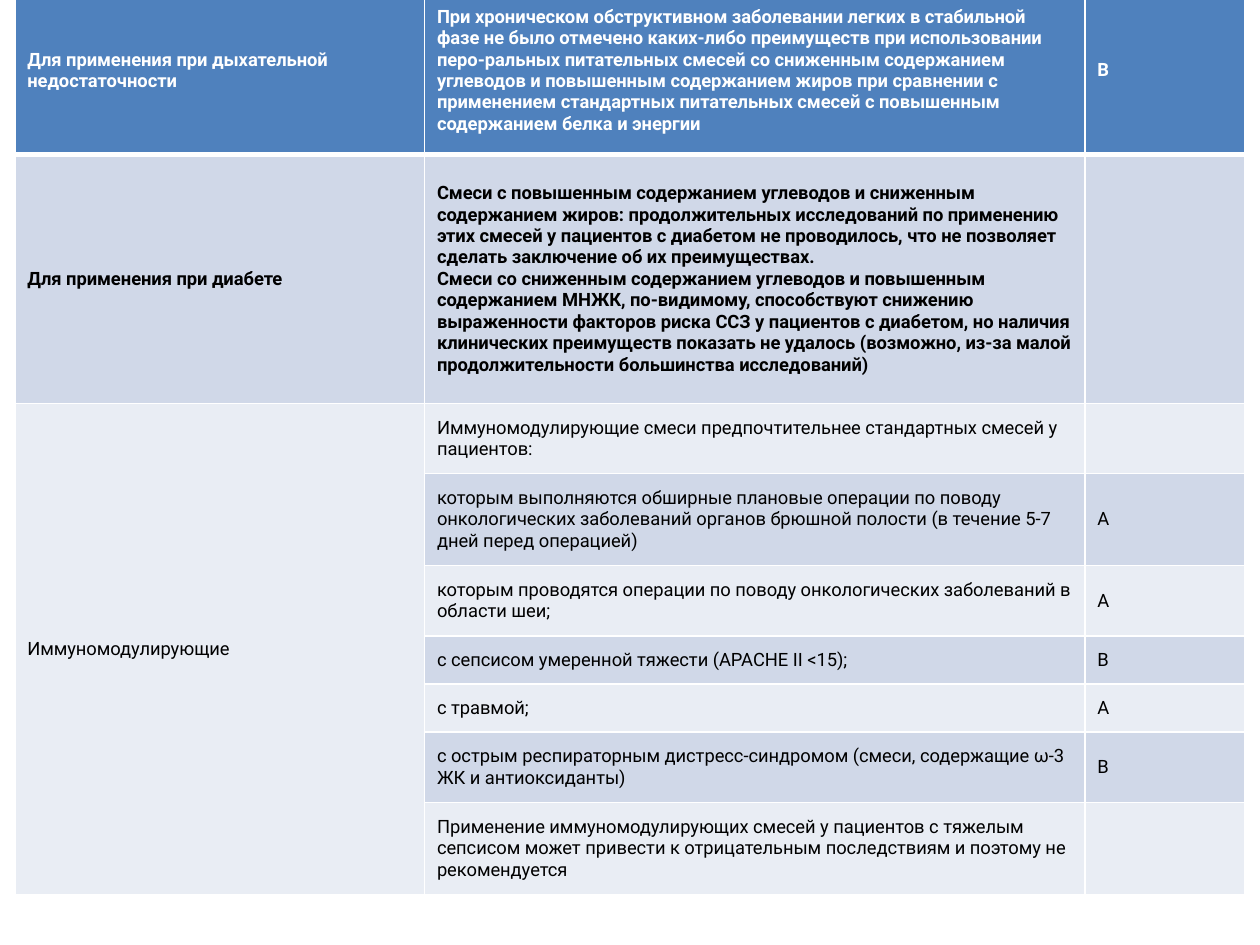
from lxml import etree
from pptx import Presentation
from pptx import util as u
from pptx.dml.color import RGBColor
from pptx.enum import text
from pptx.oxml import ns

WHITE = RGBColor(0xFF, 0xFF, 0xFF)
BLACK = RGBColor(0x00, 0x00, 0x00)
BLUE = RGBColor(0x4F, 0x81, 0xBD)
MID_BAND = RGBColor(0xD0, 0xD8, 0xE8)
LIGHT_BAND = RGBColor(0xE9, 0xED, 0xF4)

COLUMN_WIDTHS = [8.26, 13.31, 3.23]
ONE_LINE, TWO_LINES, THREE_LINES = 0.97, 1.42, 1.85
ROWS = [
    (3.4, ["Для применения при дыхательной недостаточности"],
     ["При хроническом обструктивном заболевании легких в стабильной фазе не было отмечено "
      "каких-либо преимуществ при использовании перо-ральных питательных смесей со сниженным "
      "содержанием углеводов и повышенным содержанием жиров при сравнении с применением "
      "стандартных питательных смесей с повышенным содержанием белка и энергии"], ["В"]),
    (5.01, ["Для применения при диабете"],
     ["Смеси с повышенным содержанием углеводов и сниженным содержанием жиров: продолжительных "
      "исследований по применению этих смесей у пациентов с диабетом не проводилось, что не "
      "позволяет сделать заключение об их преимуществах.",
      "Смеси со сниженным содержанием углеводов и повышенным содержанием МНЖК, по-видимому, "
      "способствуют снижению выраженности факторов риска ССЗ у пациентов с диабетом, но наличия "
      "клинических преимуществ показать не удалось (возможно, из-за малой продолжительности "
      "большинства исследований)"], []),
    (TWO_LINES, ["Иммуномодулирующие"],
     ["Иммуномодулирующие смеси предпочтительнее стандартных смесей у пациентов:"], []),
    (THREE_LINES, [],
     ["которым выполняются обширные плановые операции по поводу онкологических заболеваний "
      "органов брюшной полости (в течение 5-7 дней перед операцией)"], ["А"]),
    (TWO_LINES, [],
     ["которым проводятся операции по поводу онкологических заболеваний в области шеи;"], ["А"]),
    (ONE_LINE, [], ["с сепсисом умеренной тяжести (APACHE II <15);"], ["В"]),
    (ONE_LINE, [], ["с травмой;"], ["А"]),
    (TWO_LINES, [],
     ["с острым респираторным дистресс-синдромом (смеси, содержащие ω-3 ЖК и антиоксиданты)"],
     ["В"]),
    (THREE_LINES, [],
     ["Применение иммуномодулирующих смесей у пациентов с тяжелым сепсисом может привести к "
      "отрицательным последствиям и поэтому не рекомендуется"], []),
]
BOLD_ROWS = 2
MERGE_START = 2


class SlideBuilder:
    font = "Roboto"
    size = u.Pt(10.5)
    inset = u.Cm(0.25)

    def __init__(self, presentation):
        self.slide = presentation.slides.add_slide(presentation.slide_layouts[6])

    def table(self, left, top, widths, rows):
        heights = [row[0] for row in rows]
        frame = self.slide.shapes.add_table(
            len(rows), len(widths), u.Cm(left), u.Cm(top), u.Cm(sum(widths)), u.Cm(sum(heights)))
        table = frame.table
        for column, width in zip(table.columns, widths):
            column.width = u.Cm(width)
        for index, (height, *contents) in enumerate(rows):
            table.rows[index].height = u.Cm(height)
            band = MID_BAND if index % 2 else LIGHT_BAND
            for column, paragraphs in enumerate(contents):
                fill = BLUE if index == 0 else band
                if column == 0 and index >= MERGE_START:
                    fill = LIGHT_BAND
                self.cell(table.cell(index, column), paragraphs, fill,
                          WHITE if index == 0 else BLACK, index < BOLD_ROWS,
                          top=3 if index == 1 else 1, bottom=3 if index == 0 else 1)
        return table

    def cell(self, cell, paragraphs, fill, color, bold, top, bottom):
        cell.vertical_anchor = text.MSO_ANCHOR.MIDDLE
        cell.margin_left = cell.margin_right = self.inset
        cell.margin_top = cell.margin_bottom = self.inset
        for side, width in (("L", 1), ("R", 1), ("T", top), ("B", bottom)):
            self.border(cell, side, width)
        cell.fill.solid()
        cell.fill.fore_color.rgb = fill
        for index, content in enumerate(paragraphs):
            frame = cell.text_frame
            paragraph = frame.add_paragraph() if index else frame.paragraphs[0]
            self.run(paragraph, content, color, bold)

    def run(self, paragraph, content, color, bold):
        run = paragraph.add_run()
        run.text = content
        run.font.name = self.font
        run.font.size = self.size
        run.font.bold = bold
        run.font.color.rgb = color

    def border(self, cell, side, width):
        properties = cell._tc.get_or_add_tcPr()
        line = etree.SubElement(properties, ns.qn(f"a:ln{side}"), w=str(u.Pt(width)))
        fill = etree.SubElement(line, ns.qn("a:solidFill"))
        etree.SubElement(fill, ns.qn("a:srgbClr"), val=str(WHITE))


def main():
    presentation = Presentation()
    presentation.slide_width = u.Cm(25.4)
    presentation.slide_height = u.Cm(19.05)
    builder = SlideBuilder(presentation)
    table = builder.table(0.3, -0.28, COLUMN_WIDTHS, ROWS)
    table.cell(MERGE_START, 0).merge(table.cell(len(ROWS) - 1, 0))
    presentation.save("out.pptx")


if __name__ == "__main__":
    main()
